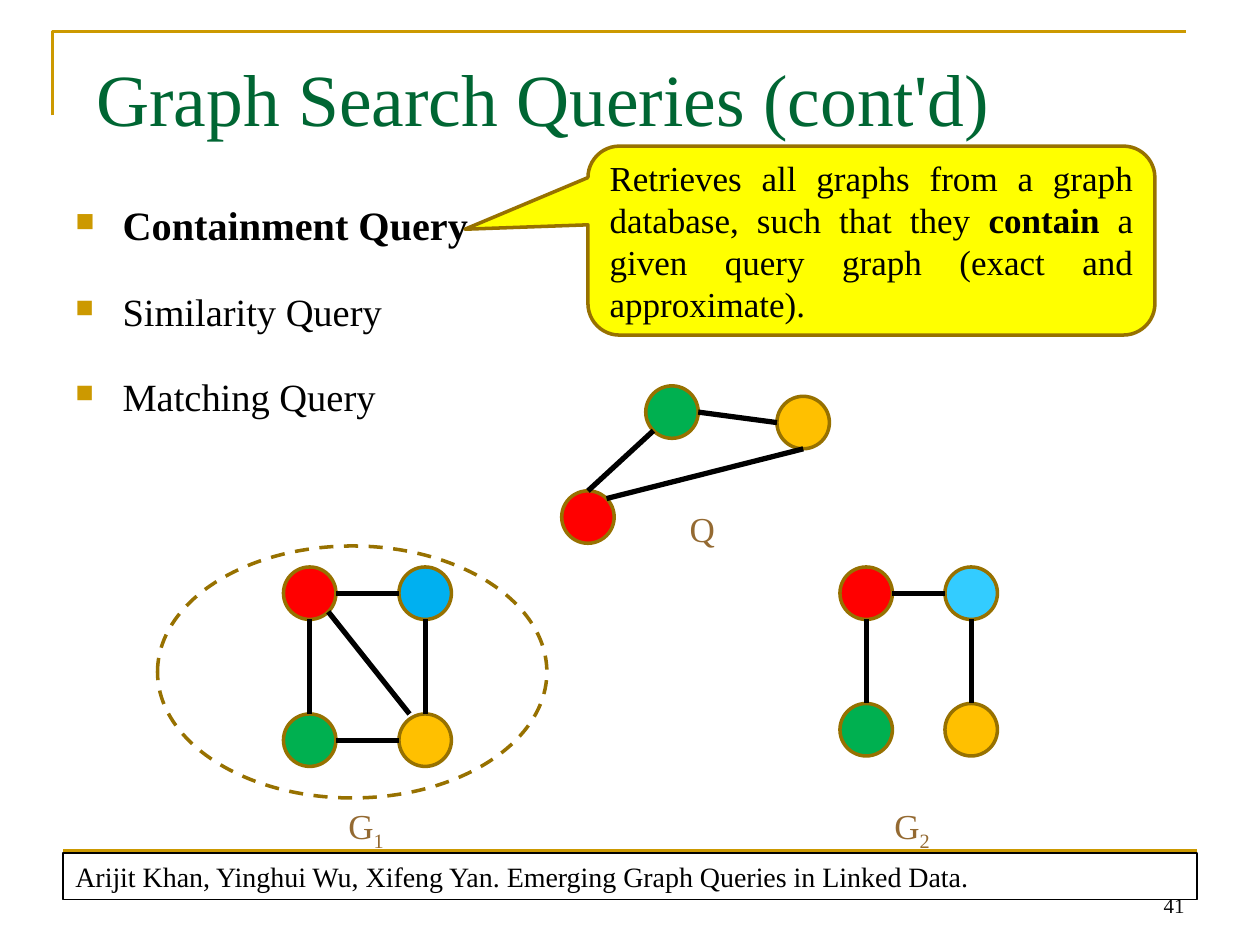
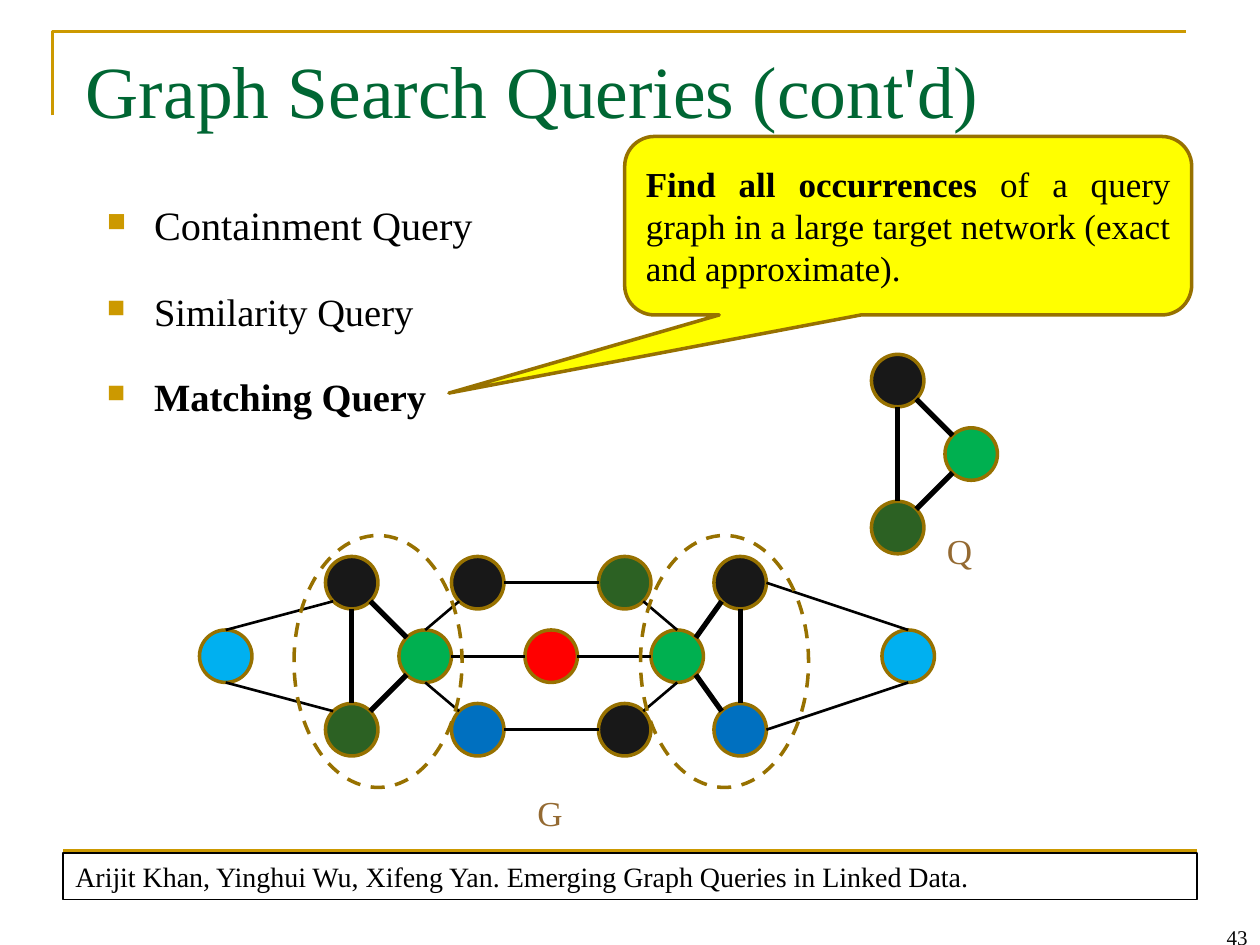
from math import sqrt

from lxml import etree
from pptx import Presentation
from pptx import util as u
from pptx.dml.color import RGBColor
from pptx.enum import dml, shapes, text
from pptx.oxml import ns

Pt = u.Pt
FONT = "Times New Roman"
GOLD = RGBColor(0xCC, 0x99, 0x00)
BROWN = RGBColor(0x97, 0x71, 0x00)
TAN = RGBColor(0x94, 0x6A, 0x32)
PINE = RGBColor(0x00, 0x66, 0x33)
INK = RGBColor(0x0A, 0x0A, 0x0A)
BLACK = RGBColor(0, 0, 0)
YELLOW = RGBColor(0xFF, 0xFF, 0)
RED = RGBColor(0xFF, 0, 0)
BLUE = RGBColor(0x00, 0xB0, 0xF0)
SKY = RGBColor(0x33, 0xCC, 0xFF)
NAVY = RGBColor(0x00, 0x70, 0xC0)
GREEN = RGBColor(0x00, 0xB0, 0x50)
MOSS = RGBColor(0x2C, 0x61, 0x23)
AMBER = RGBColor(0xFF, 0xC0, 0x00)
COAL = RGBColor(0x18, 0x18, 0x18)

TITLE = "Graph Search Queries (cont'd)"
SOURCE = "Arijit Khan, Yinghui Wu, Xifeng Yan. Emerging Graph Queries in Linked Data."
QUERIES = [("Containment Query", 23), ("Similarity Query", 22), ("Matching Query", 22)]

NODE = 30  # node diameter
NEAR = (1 - sqrt(0.5)) / 2
FAR = 1 - NEAR
# Points on a node, as shares of its width and height
SITES = {"n": (0.5, 0), "ne": (FAR, NEAR), "e": (1, 0.5), "se": (FAR, FAR),
         "s": (0.5, 1), "sw": (NEAR, FAR), "w": (0, 0.5), "nw": (NEAR, NEAR),
         "nnw": (0.2, 0)}

LEFT, JUST, RIGHT = (text.PP_ALIGN.LEFT, text.PP_ALIGN.JUSTIFY,
                     text.PP_ALIGN.RIGHT)
TOP, MID, LOW = (text.MSO_ANCHOR.TOP, text.MSO_ANCHOR.MIDDLE,
                 text.MSO_ANCHOR.BOTTOM)


def pts(*nums):
    return [Pt(num) for num in nums]


# ---- Basic parts ----
def write(para, runs, size=20, color=BLACK, align=LEFT):
    """Write runs of (words, style); a style is "", "b" or "sub"."""
    para.alignment = align
    for words, style in runs:
        run = para.add_run()
        run.text = words
        font = run.font
        font.name, font.size, font.bold = FONT, Pt(size), style == "b"
        font.color.rgb = color
        if style == "sub":
            font._element.set("baseline", "-25000")


def label(sld, box, runs, anchor=TOP, wrap=True, **style):
    shp = sld.shapes.add_textbox(*pts(*box))
    frame = shp.text_frame
    frame.word_wrap, frame.vertical_anchor = wrap, anchor
    write(frame.paragraphs[0], runs, **style)
    return shp


def shape(sld, kind, box, fill=None):
    shp = sld.shapes.add_shape(kind, *pts(*box))
    shp.shadow.inherit = False
    if fill is None:
        shp.fill.background()
    else:
        shp.fill.solid()
        shp.fill.fore_color.rgb = fill
    shp.line.color.rgb, shp.line.width = BROWN, Pt(2)
    return shp


def line(sld, start, end, color=BLACK, width=3):
    con = sld.shapes.add_connector(shapes.MSO_CONNECTOR.STRAIGHT,
                                   *pts(*start, *end))
    con.line.color.rgb, con.line.width = color, Pt(width)
    etree.SubElement(con._element.spPr, ns.qn("a:effectLst"))


# ---- Shared regions ----
def frame(sld, left, top, width, height):
    """Gold corner rule, and the rule above the source."""
    pen = sld.shapes.build_freeform(*pts(left, top + height))
    pen.add_line_segments([pts(left, top), pts(left + width, top)], close=False)
    rule = pen.convert_to_shape()
    rule.shadow.inherit = False
    rule.fill.background()
    rule.line.color.rgb, rule.line.width = GOLD, Pt(1.5)
    line(sld, (36, 486), (684, 486), GOLD, 1.5)


def source(sld, box):
    shp = label(sld, box, [(SOURCE, "")], size=16)
    shp.line.color.rgb, shp.line.width = BLACK, Pt(0.75)


def bullets(sld, box, strong):
    shp = sld.shapes.add_textbox(*pts(*box))
    body = shp.text_frame
    body.word_wrap = True
    for num, (words, size) in enumerate(QUERIES):
        para = body.add_paragraph() if num else body.paragraphs[0]
        write(para, [(words, "b" if num == strong else "")], size, align=JUST)
        para.line_spacing = 0.9
        para.space_before = Pt(25 if num else 2)
        props = para._p.get_or_add_pPr()
        props.set("marL", str(Pt(27)))
        props.set("indent", str(-Pt(27)))
        tint = etree.SubElement(props, ns.qn("a:buClr"))
        etree.SubElement(tint, ns.qn("a:srgbClr"), val=str(GOLD))
        etree.SubElement(props, ns.qn("a:buSzPct"), val="65000")
        etree.SubElement(props, ns.qn("a:buChar"), char="■")


def callout(sld, box, tip, runs):
    shp = shape(sld, shapes.MSO_SHAPE.ROUNDED_RECTANGULAR_CALLOUT, box, YELLOW)
    for num, share in enumerate((*tip, 0.167)):
        shp.adjustments[num] = share
    body = shp.text_frame
    body.word_wrap, body.vertical_anchor = True, MID
    write(body.paragraphs[0], runs, align=JUST)


def graph(sld, left, top, nodes, edges):
    """Nodes are name: (x, y, colour); an edge is "a.site b.site [width]"."""
    for x, y, color in nodes.values():
        shape(sld, shapes.MSO_SHAPE.OVAL, (left + x, top + y, NODE, NODE), color)

    def spot(end):
        name, site = end.split(".")
        x, y, _ = nodes[name]
        dx, dy = SITES[site]
        return left + x + dx * NODE, top + y + dy * NODE

    for edge in edges:
        start, end, *width = edge.split()
        line(sld, spot(start), spot(end), width=float(width[0]) if width else 3)


def halo(sld, box):
    ring = shape(sld, shapes.MSO_SHAPE.OVAL, box)
    ring.line.dash_style = dml.MSO_LINE.DASH


def name(sld, left, top, runs, width=30):
    label(sld, (left, top, width, 31.5), runs, wrap=False, color=TAN)


def base(deck, title, page, number, indent, strong):
    """Start a slide with all that the slides share."""
    sld = deck.slides.add_slide(deck.slide_layouts[6])
    frame(sld, 30, 18, 648, 48)
    label(sld, (*title, 588, 54), [(TITLE, "")], size=42, color=PINE)
    label(sld, page, [(number, "")], LOW, size=12, color=INK, align=RIGHT)
    bullets(sld, (indent, 114, 606, 318), strong)
    return sld


# ---- Slides ----
def contain(deck):
    sld = base(deck, (48, 27), (516, 492, 168, 36), "41", 36, 0)
    callout(sld, (336, 83.5, 324, 108), (-0.717, -0.06), [
        ("Retrieves all graphs from a graph database, such that they ", ""),
        ("contain", "b"),
        (" a given query graph (exact and approximate).", "")])
    # First data graph, with the match ringed
    graph(sld, 162, 324,
          {"red": (0, 0, RED), "blue": (66, 0, BLUE),
           "green": (0, 84, GREEN), "amber": (66, 84, AMBER)},
          ["red.s green.n", "red.e blue.w", "blue.s amber.n",
           "green.e amber.w", "red.se amber.nnw"])
    halo(sld, (90, 312, 222.5, 144))
    name(sld, 192, 456, [("G", ""), ("1", "sub")], 36)
    # Second data graph
    graph(sld, 480, 324,
          {"red": (0, 0, RED), "sky": (60, 0, SKY),
           "green": (0, 78, GREEN), "amber": (60, 78, AMBER)},
          ["red.s green.n", "red.e sky.w", "sky.s amber.n"])
    name(sld, 504, 456, [("G", ""), ("2", "sub")], 36)
    # Query graph
    graph(sld, 321, 220.5,
          {"red": (0, 60, RED), "green": (48, 0, GREEN),
           "amber": (123, 6, AMBER)},
          ["green.sw red.n", "green.e amber.w", "amber.s red.ne"])
    name(sld, 387, 286.5, [("Q", "")])
    source(sld, (36, 487.5, 648, 26.5))


def match(deck):
    sld = base(deck, (42, 22), (672, 505, 48, 41), "43", 54, 2)
    callout(sld, (357, 78, 324, 102), (-0.81, 0.938), [
        ("Find all occurrences ", "b"),
        ("of a query graph in a large target network (exact and approximate).", "")])
    # Query graph
    graph(sld, 498, 202.5,
          {"coal": (0, 0, COAL), "green": (42, 42, GREEN), "moss": (0, 84, MOSS)},
          ["coal.se green.nw", "green.sw moss.ne", "coal.s moss.n"])
    name(sld, 534, 299, [("Q", "")])
    # Target network: three rows of nodes
    rows = {
        0: [("a", 72, COAL), ("b", 144, COAL), ("c", 228, MOSS), ("d", 294, COAL)],
        42: [("west", 0, BLUE), ("lhub", 114, GREEN), ("core", 186, RED),
             ("rhub", 258, GREEN), ("east", 390, BLUE)],
        84: [("e", 72, MOSS), ("f", 144, NAVY), ("g", 228, COAL), ("h", 294, NAVY)],
    }
    nodes = {key: (x, y, color) for y, row in rows.items() for key, x, color in row}
    thick = ["a.se lhub.nw", "lhub.sw e.ne", "a.s e.n",
             "d.sw rhub.ne", "rhub.se h.nw", "d.s h.n"]
    thin = ["a.sw west.n", "west.s e.nw", "b.e c.w", "b.sw lhub.n",
            "lhub.s f.nw", "f.e g.w", "c.se rhub.n", "rhub.s g.ne",
            "lhub.e core.w", "core.e rhub.w", "d.e east.n", "east.s h.e"]
    graph(sld, 114, 318, nodes, thick + [edge + " 1.5" for edge in thin])
    for left in (168, 366):
        halo(sld, (left, 306, 96, 144))
    name(sld, 300, 448.5, [("G", "")])
    source(sld, (36, 487.5, 648, 26.5))


def main():
    deck = Presentation()
    deck.slide_width, deck.slide_height = pts(720, 540)
    contain(deck)
    match(deck)
    deck.save("out.pptx")


if __name__ == "__main__":
    main()
